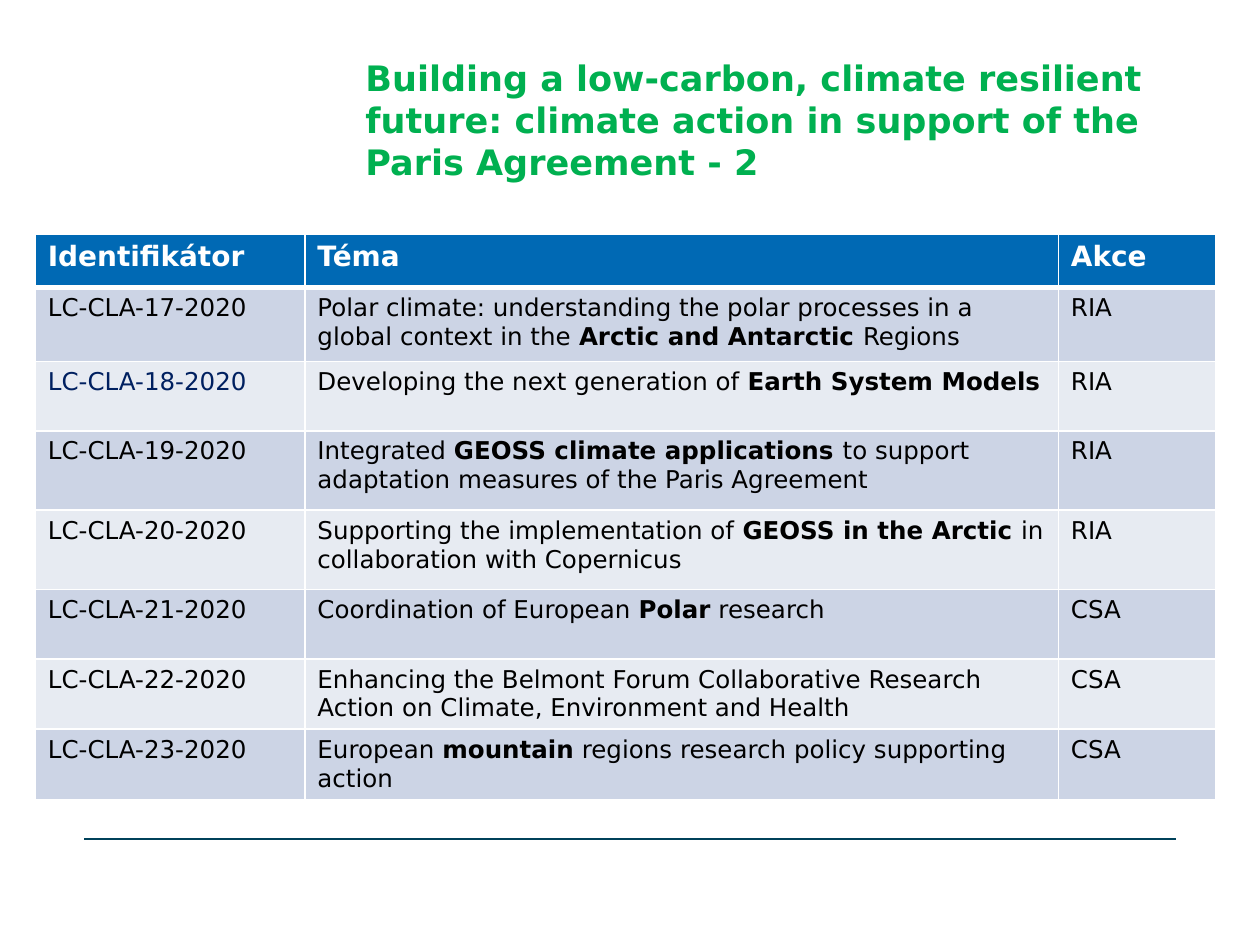
from pptx import Presentation
from pptx.dml.color import RGBColor as RGB
from pptx.enum.shapes import MSO_CONNECTOR as Link
from pptx.enum.text import MSO_ANCHOR as Anchor, MSO_AUTO_SIZE as Fit, PP_ALIGN as Align
from pptx.oxml import parse_xml
from pptx.oxml.ns import nsdecls
from pptx.util import Inches, Pt

COLORS = {
    "title": "00B050", "rule": "00415A", "head": "0069B4", "odd": "CCD4E5",
    "even": "E7EBF2", "white": "FFFFFF", "black": "000000", "navy": "002060",
}


def write(frame, text, size=14, color="black", bold=False, space=0):
    """Fill a text frame; parts between asterisks are bold."""
    para = frame.paragraphs[0]
    para.alignment = Align.LEFT
    if space:
        para.space_before = para.space_after = Pt(space)
    for i, part in enumerate(text.split("*")):
        run = para.add_run()
        run.text = part
        font = run.font
        font.name, font.size = "DejaVu Sans", Pt(size)
        font.bold = bold or i % 2 == 1
        font.color.rgb = RGB.from_string(COLORS[color])


def paint(cell, fill, top=1, bottom=1):
    """Give a cell its fill and white borders, widths in points."""
    cell.fill.solid()
    cell.fill.fore_color.rgb = RGB.from_string(COLORS[fill])
    props = cell._tc.get_or_add_tcPr()
    sides = (("L", 1), ("R", 1), ("T", top), ("B", bottom))
    for i, (side, width) in enumerate(sides):
        props.insert(i, parse_xml(
            f'<a:ln{side} {nsdecls("a")} w="{Pt(width)}"><a:solidFill>'
            f'<a:srgbClr val="{COLORS["white"]}"/></a:solidFill></a:ln{side}>'))


deck = Presentation()
deck.slide_width, deck.slide_height = Inches(10), Inches(7.5)
slide = deck.slides.add_slide(deck.slide_layouts[5])

# Bottom rule
rule = slide.shapes.add_connector(
    Link.STRAIGHT, Inches(0.67), Inches(6.66), Inches(9.33), Inches(6.66))
rule.line.color.rgb = RGB.from_string(COLORS["rule"])
rule.line.width = Pt(1)
rule._element.spPr.append(parse_xml(f'<a:effectLst {nsdecls("a")}/>'))

# Title
title = slide.shapes.title
title.left, title.top = Inches(2.8), Inches(0.4)
title.width, title.height = Inches(6.63), Inches(1.1)
frame = title.text_frame
frame.word_wrap = True
frame.auto_size = Fit.NONE
frame.vertical_anchor = Anchor.BOTTOM
write(frame, "Building a low-carbon, climate resilient future: climate action "
      "in support of the Paris Agreement - 2", size=20, color="title", bold=True)

# Topics table
rows = [
    ("Identifikátor", "Téma", "Akce"),
    ("LC-CLA-17-2020", "Polar climate: understanding the polar processes in a "
     "global context in the *Arctic and Antarctic *Regions", "RIA"),
    ("LC-CLA-18-2020",
     "Developing the next generation of *Earth System Models*", "RIA"),
    ("LC-CLA-19-2020", "Integrated *GEOSS climate applications *to support "
     "adaptation measures of the Paris Agreement", "RIA"),
    ("LC-CLA-20-2020", "Supporting the implementation of *GEOSS in the Arctic *in "
     "collaboration with Copernicus", "RIA"),
    ("LC-CLA-21-2020", "Coordination of European *Polar* research", "CSA"),
    ("LC-CLA-22-2020", "Enhancing the Belmont Forum Collaborative Research "
     "Action on Climate, Environment and Health", "CSA"),
    ("LC-CLA-23-2020",
     "European *mountain* regions research policy supporting action", "CSA"),
]
widths = [2.14, 5.98, 1.25]
heights = [0.42, 0.59, 0.55, 0.63, 0.63, 0.55, 0.55, 0.55]
table = slide.shapes.add_table(
    len(rows), len(widths), Inches(0.28), Inches(1.86),
    Inches(sum(widths)), Inches(sum(heights))).table
for col, width in zip(table.columns, widths):
    col.width = Inches(width)
for row, height in zip(table.rows, heights):
    row.height = Inches(height)

for r, row in enumerate(rows):
    for c, text in enumerate(row):
        cell = table.cell(r, c)
        if r == 0:
            paint(cell, "head", bottom=3)
            write(cell.text_frame, text, size=16, color="white", bold=True)
        else:
            paint(cell, "odd" if r % 2 else "even", top=3 if r == 1 else 1)
            write(cell.text_frame, text,
                  color="navy" if (r, c) == (2, 0) else "black",
                  space=1 if (r, c) == (3, 1) else 0)

deck.save("out.pptx")
